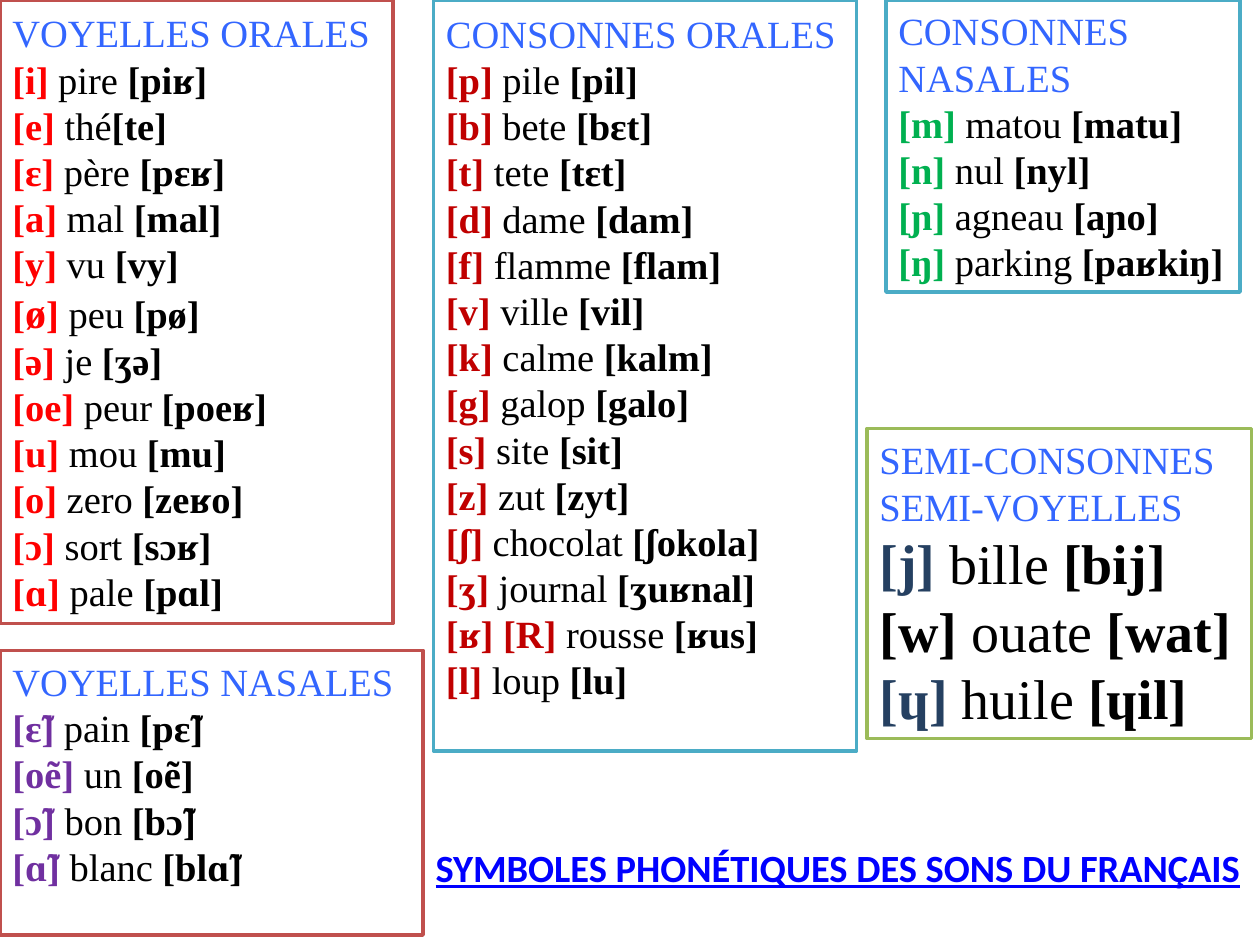
from dataclasses import dataclass
from typing import Optional

from pptx import Presentation
from pptx.dml.color import RGBColor
from pptx.enum.shapes import MSO_SHAPE
from pptx.enum.text import MSO_ANCHOR, MSO_AUTO_SIZE, PP_ALIGN
from pptx.util import Cm, Pt

RECTANGLE = MSO_SHAPE.RECTANGLE
TOP = MSO_ANCHOR.TOP
MIDDLE = MSO_ANCHOR.MIDDLE
LEFT = PP_ALIGN.LEFT
FIXED_SIZE = MSO_AUTO_SIZE.NONE

WHITE = RGBColor(0xFF, 0xFF, 0xFF)
BLACK = RGBColor(0x00, 0x00, 0x00)
HEADING_BLUE = RGBColor(0x33, 0x66, 0xFF)
TITLE_BLUE = RGBColor(0x00, 0x00, 0xFF)
BRICK = RGBColor(0xC0, 0x50, 0x4D)
TEAL = RGBColor(0x4B, 0xAC, 0xC6)
OLIVE = RGBColor(0x9B, 0xBB, 0x59)
RED = RGBColor(0xFF, 0x00, 0x00)
DARK_RED = RGBColor(0xC0, 0x00, 0x00)
PURPLE = RGBColor(0x70, 0x30, 0xA0)
GREEN = RGBColor(0x00, 0xB0, 0x50)
NAVY = RGBColor(0x25, 0x40, 0x61)

SERIF = "Times New Roman"
SANS = "Calibri"
TEXT_SIZE = 22


@dataclass(frozen=True)
class Sound:
    symbol: str
    word: str
    transcription: str
    color: Optional[RGBColor] = None
    letter_size: Optional[int] = None


@dataclass(frozen=True)
class Panel:
    heading: str
    left: float
    top: float
    width: float
    height: float
    border: RGBColor
    symbol_color: RGBColor
    sounds: tuple[Sound, ...]
    size: int = TEXT_SIZE
    bottom_margin: float = 0.13


PANELS = (
    Panel("VOYELLES ORALES", 0, 0, 7.92, 12.57, BRICK, RED, (
        Sound("[i]", " pire ", "[piʁ]"),
        Sound("[e]", " thé", "[te]"),
        Sound("[ɛ]", " père ", "[pɛʁ]"),
        Sound("[a]", " mal ", "[mal]"),
        Sound("[y]", " vu ", "[vy]"),
        Sound("[ø]", " peu ", "[pø]", letter_size=24),
        Sound("[ə]", " je ", "[ʒə]"),
        Sound("[oe]", " peur ", "[poeʁ]"),
        Sound("[u]", " mou ", "[mu]"),
        Sound("[o]", " zero ", "[zeʁo]"),
        Sound("[ɔ]", " sort ", "[sɔʁ]"),
        Sound("[ɑ]", " pale ", "[pɑl]"),
    )),
    Panel("VOYELLES NASALES", 0, 13.11, 8.53, 5.74, BRICK, PURPLE, (
        Sound("[ɛ̃]", " pain ", "[pɛ̃]"),
        Sound("[oẽ]", " un ", "[oẽ]"),
        Sound("[ɔ̃]", " bon ", "[bɔ̃]"),
        Sound("[ɑ̃]", " blanc ", "[blɑ̃]"),
    ), bottom_margin=0.9),
    Panel("CONSONNES ORALES", 8.74, 0, 8.53, 15.14, TEAL, DARK_RED, (
        Sound("[p]", " pile ", "[pil]"),
        Sound("[b]", " bete ", "[bɛt]"),
        Sound("[t]", " tete ", "[tɛt]"),
        Sound("[d]", " dame ", "[dam]"),
        Sound("[f]", " flamme ", "[flam]"),
        Sound("[v]", " ville ", "[vil]"),
        Sound("[k]", " calme ", "[kalm]"),
        Sound("[g]", " galop ", "[galo]"),
        Sound("[s]", " site ", "[sit]"),
        Sound("[z]", " zut ", "[zyt]"),
        Sound("[ʃ]", " chocolat ", "[ʃokola]"),
        Sound("[ʒ]", " journal ", "[ʒuʁnal]"),
        Sound("[ʁ] [R]", " rousse ", "[ʁus]"),
        Sound("[l]", " loup ", "[lu]"),
    ), bottom_margin=0.9),
    Panel("CONSONNES NASALES", 17.86, 0, 7.14, 5.89, TEAL, GREEN, (
        Sound("[m]", " matou ", "[matu]"),
        Sound("[n]", " nul ", "[nyl]"),
        Sound("[ɲ]", " agneau ", "[aɲo]"),
        Sound("[ŋ]", " parking ", "[paʁkiŋ]"),
    )),
    Panel("SEMI-CONSONNES SEMI-VOYELLES", 17.48, 8.64, 7.75, 6.25, OLIVE, NAVY, (
        Sound("[j]", " bille ", "[bij]"),
        Sound("[w]", " ouate ", "[wat]", color=BLACK),
        Sound("[ɥ]", " huile ", "[ɥil]"),
    ), size=32),
)


def add_span(para, text: str, *, size: int = TEXT_SIZE, color: RGBColor = BLACK,
             bold: bool = False, underline: bool = False, font: str = SERIF) -> None:
    span = para.add_run()
    span.text = text
    span.font.name = font
    span.font.size = Pt(size)
    span.font.bold = bold
    span.font.underline = underline
    span.font.color.rgb = color


def add_sound(frame, sound: Sound, panel: Panel) -> None:
    para = frame.add_paragraph()
    para.alignment = LEFT
    color = sound.color or panel.symbol_color
    if sound.letter_size:
        add_span(para, sound.symbol[0], size=panel.size, color=color, bold=True)
        add_span(para, sound.symbol[1:-1], size=sound.letter_size, color=color, bold=True)
        add_span(para, sound.symbol[-1], size=panel.size, color=color, bold=True)
    else:
        add_span(para, sound.symbol, size=panel.size, color=color, bold=True)
    add_span(para, sound.word, size=panel.size)
    add_span(para, sound.transcription, size=panel.size, bold=True)


def add_panel(page, panel: Panel) -> None:
    box = page.shapes.add_shape(RECTANGLE, Cm(panel.left), Cm(panel.top),
                                Cm(panel.width), Cm(panel.height))
    box.shadow.inherit = False
    box.fill.solid()
    box.fill.fore_color.rgb = WHITE
    box.line.color.rgb = panel.border
    box.line.width = Pt(2)
    frame = box.text_frame
    frame.word_wrap = True
    frame.vertical_anchor = MIDDLE
    frame.margin_bottom = Cm(panel.bottom_margin)
    heading = frame.paragraphs[0]
    heading.alignment = LEFT
    add_span(heading, panel.heading, color=HEADING_BLUE)
    for sound in panel.sounds:
        add_sound(frame, sound, panel)


def add_title(page, text: str) -> None:
    box = page.shapes.title
    box.left, box.top, box.width, box.height = Cm(8.53), Cm(16.89), Cm(16.92), Cm(1.96)
    frame = box.text_frame
    frame.word_wrap = False
    frame.auto_size = FIXED_SIZE
    frame.vertical_anchor = TOP
    para = frame.paragraphs[0]
    para.alignment = LEFT
    add_span(para, text, color=TITLE_BLUE, bold=True, underline=True, font=SANS)


def main() -> None:
    deck = Presentation()
    deck.slide_width, deck.slide_height = Cm(25.4), Cm(19.05)
    page = deck.slides.add_slide(deck.slide_layouts.get_by_name("Title Only"))
    for panel in PANELS:
        add_panel(page, panel)
    add_title(page, "SYMBOLES PHONÉTIQUES DES SONS DU FRANÇAIS")
    deck.save("out.pptx")


if __name__ == "__main__":
    main()
